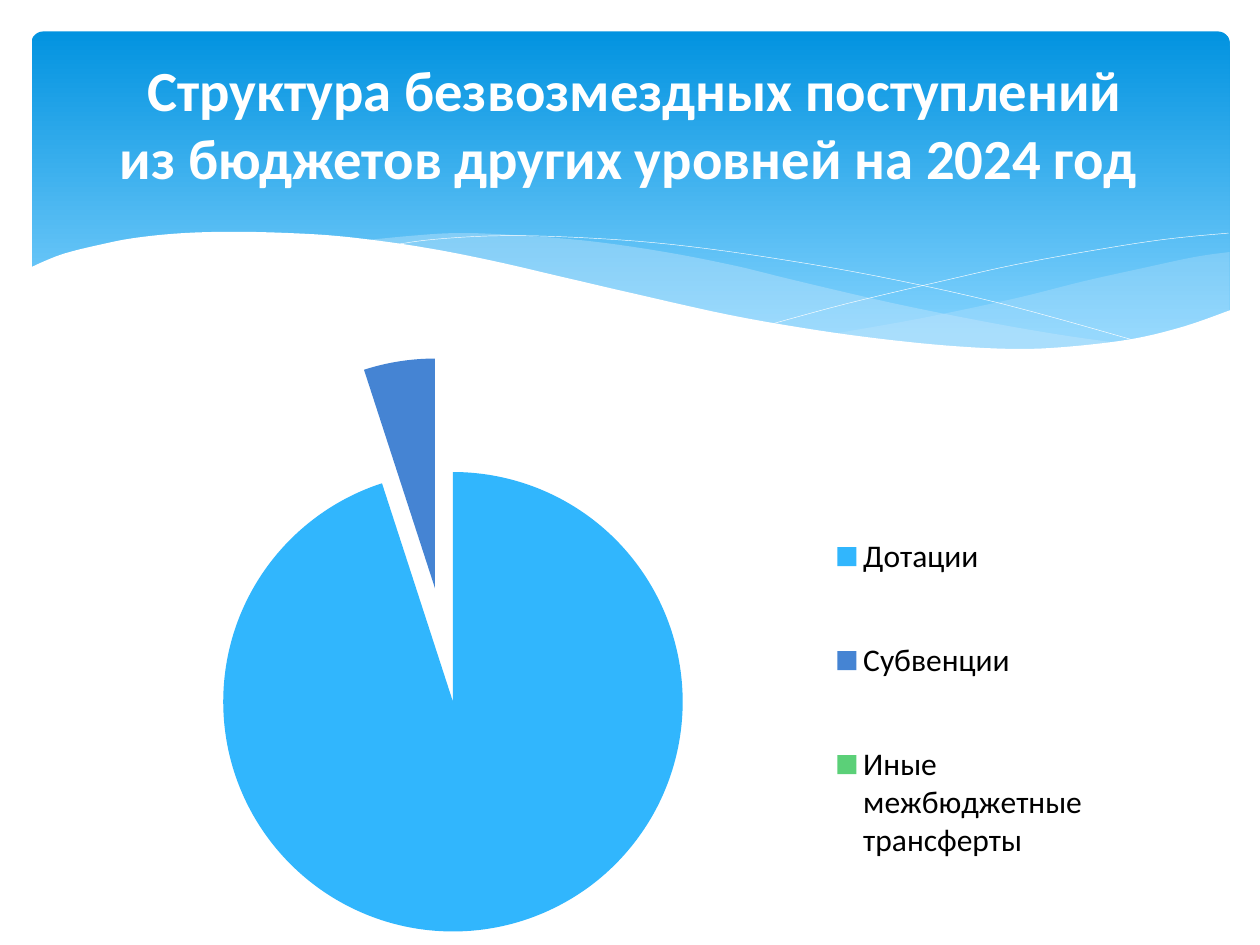
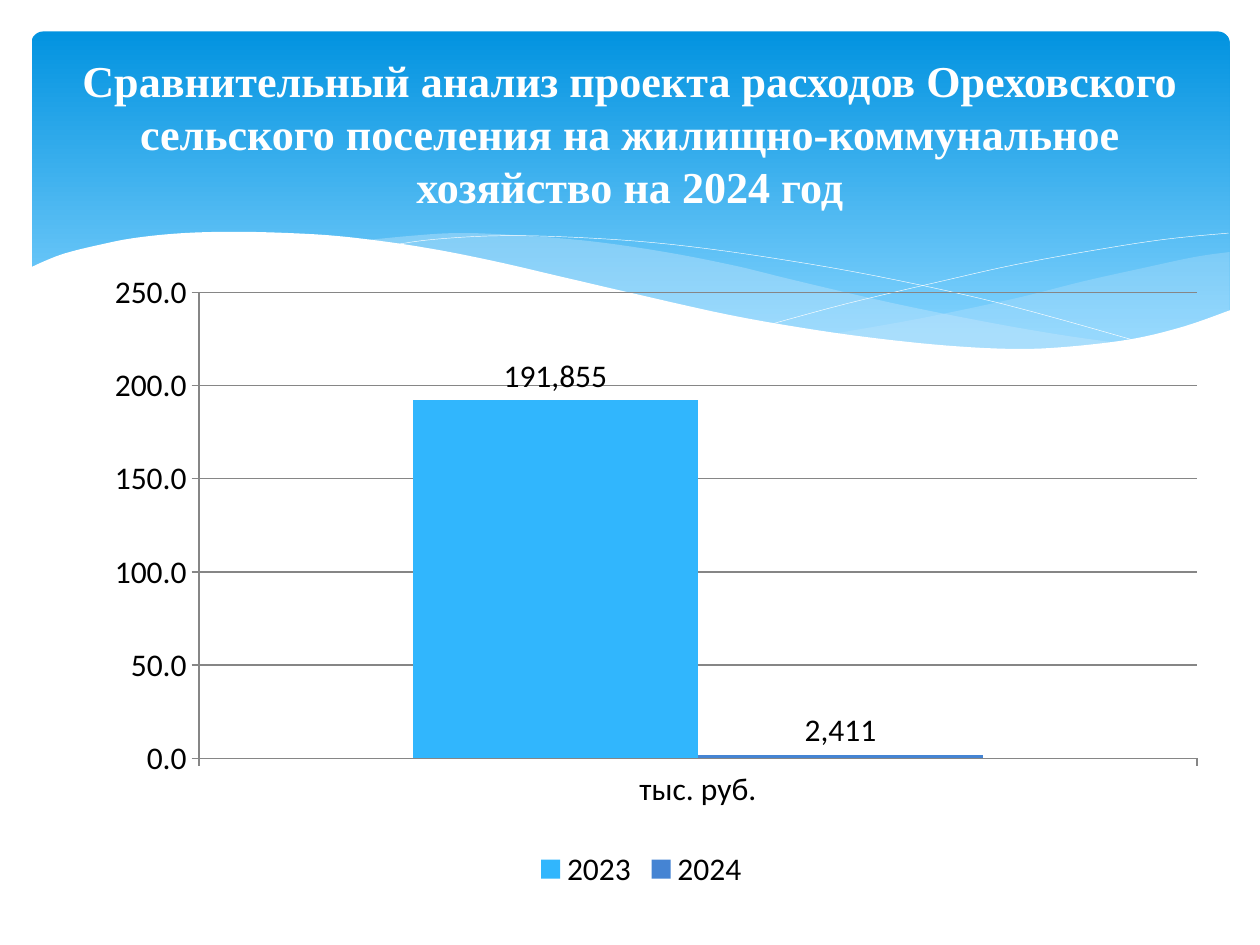
from dataclasses import dataclass
from typing import Any

from lxml.etree import SubElement
from pptx import Presentation
from pptx.chart.data import CategoryChartData
from pptx.dml.color import RGBColor
from pptx.enum.chart import XL_CHART_TYPE, XL_LABEL_POSITION, XL_LEGEND_POSITION, XL_TICK_MARK
from pptx.enum.shapes import MSO_SHAPE
from pptx.enum.text import MSO_ANCHOR, PP_ALIGN
from pptx.oxml import parse_xml
from pptx.oxml.ns import nsdecls, qn
from pptx.util import Inches, Pt

Point = tuple[float, float]
Box = tuple[float, float, float, float]

WHITE, BLACK, GRID = "FFFFFF", "000000", "868686"
BAND_TOP, BAND_BOTTOM, WAVE = "0293E0", "83D3FE", "C6E7FC"
SERIES_COLORS = ("31B6FD", "4584D3", "5BD078")


@dataclass
class Wave:
    """Smooth curves joined into one outline, filled or drawn as a hairline."""
    curves: list[list[Point]]
    fill: str | None = None
    alpha: int = 100


@dataclass
class Title:
    """Heading lines with their box and font."""
    lines: list[str]
    box: Box
    font: str
    size: float


WAVES = [
    Wave([[(9.76, 2), (9.48, 2.04), (9.06, 2.13), (8.61, 2.23), (8.05, 2.37), (7.29, 2.53),
           (6.61, 2.65)],
          [(6.61, 2.65), (7.05, 2.71), (7.57, 2.76), (8.03, 2.78), (8.54, 2.76), (8.97, 2.7),
           (9.35, 2.62), (9.76, 2.47)]], WAVE, 29),
    Wave([[(8.93, 2.73), (8.37, 2.65), (7.75, 2.54), (7.06, 2.4), (6.29, 2.22), (5.84, 2.11),
           (5.28, 2), (4.65, 1.91), (3.99, 1.86), (3.61, 1.85), (3.28, 1.87), (2.86, 1.91)],
          [(2.86, 1.91), (3.42, 1.99), (4.04, 2.11), (4.91, 2.32), (5.66, 2.48), (6.34, 2.61),
           (6.95, 2.7), (7.48, 2.76), (7.96, 2.78), (8.48, 2.77), (8.93, 2.73)]], WAVE, 40),
    Wave([[(3.09, 1.95), (3.44, 1.9), (4.01, 1.87), (4.69, 1.89), (5.33, 1.94), (6.08, 2.04),
           (6.95, 2.19), (7.95, 2.41), (9.07, 2.72)]]),
    Wave([[(6.13, 2.57), (6.72, 2.41), (7.48, 2.23), (8.06, 2.1), (8.66, 1.99), (9.24, 1.9),
           (9.75, 1.85)]]),
    Wave([[(9.77, 2.46), (9.4, 2.59), (8.99, 2.69), (8.5, 2.75), (8.09, 2.77), (7.61, 2.75),
           (7.08, 2.7), (6.48, 2.62), (5.79, 2.5), (5.03, 2.33), (4.47, 2.2), (3.91, 2.07),
           (3.4, 1.97), (2.92, 1.9), (2.5, 1.86), (1.93, 1.84), (1.46, 1.85), (1.06, 1.89),
           (0.76, 1.95), (0.52, 2.01), (0.36, 2.07), (0.23, 2.13)],
          [(0.23, 3.29), (9.77, 3.29)]], WHITE),
]


def rgb(color: str) -> RGBColor:
    """Turn a hex string into a colour."""
    return RGBColor.from_string(color)


def apply(target: Any, values: dict[str, Any]) -> None:
    """Set each named attribute on the target."""
    for name, value in values.items():
        setattr(target, name, value)


def style_font(font: Any, name: str, size: float, color: str, bold: bool = False) -> None:
    """Format a font."""
    apply(font, {"name": name, "size": Pt(size), "bold": bold})
    font.color.rgb = rgb(color)


def paint(target: Any, color: str) -> None:
    """Give a solid fill."""
    target.fill.solid()
    target.fill.fore_color.rgb = rgb(color)


def smooth(points: list[Point], steps: int = 5) -> list[Point]:
    """Sample a Catmull-Rom curve through the points."""
    if len(points) < 3:
        return points
    ends = [points[0], *points, points[-1]]
    curve = [points[0]]
    for a, b, c, d in zip(ends, ends[1:], ends[2:], ends[3:]):
        for t in (i / steps for i in range(1, steps + 1)):
            x, y = (
                (2 * q + (r - p) * t + (2 * p - 5 * q + 4 * r - u) * t ** 2
                 + (3 * q - p - 3 * r + u) * t ** 3) / 2
                for p, q, r, u in zip(a, b, c, d))
            curve.append((x, y))
    return curve


def add_wave(s: Any, wave: Wave) -> None:
    """Draw one wave of the header."""
    points = [(Inches(x), Inches(y)) for curve in wave.curves for x, y in smooth(curve)]
    builder = s.shapes.build_freeform(*points[0], scale=1.0)
    builder.add_line_segments(points[1:], close=wave.fill is not None)
    sp = builder.convert_to_shape()
    sp.shadow.inherit = False
    if wave.fill is None:
        sp.fill.background()
        sp.line.color.rgb = rgb(WHITE)
        sp.line.width = Pt(0.25)
        return
    paint(sp, wave.fill)
    sp.line.fill.background()
    if wave.alpha < 100:
        color = sp.fill._xPr.find(qn("a:solidFill"))[0]
        SubElement(color, qn("a:alpha"), val=str(wave.alpha * 1000))


def add_header(s: Any) -> None:
    """Draw the gradient band and its waves."""
    sp = s.shapes.add_shape(MSO_SHAPE.ROUNDED_RECTANGLE, *map(Inches, (0.25, 0.25, 9.51, 2.7)))
    sp.adjustments[0] = 0.034
    sp.shadow.inherit = False
    sp.line.fill.background()
    sp.fill.gradient()
    sp.fill.gradient_angle = 270
    for stop, color, position in zip(sp.fill.gradient_stops, (BAND_TOP, BAND_BOTTOM), (0, 0.9)):
        stop.color.rgb = rgb(color)
        stop.position = position
    for wave in WAVES:
        add_wave(s, wave)


def add_title(s: Any, title: Title) -> None:
    """Write the white heading over the band."""
    tf = s.shapes.add_textbox(*map(Inches, title.box)).text_frame
    apply(tf, {"word_wrap": True, "vertical_anchor": MSO_ANCHOR.MIDDLE})
    p = tf.paragraphs[0]
    p.alignment = PP_ALIGN.CENTER
    for i, line in enumerate(title.lines):
        if i:
            p.add_line_break()
        r = p.add_run()
        r.text = line
        style_font(r.font, title.font, title.size, WHITE, True)


def set_layout(element: Any, index: int, box: Box, inner: bool = False) -> None:
    """Place a chart part by fractions of the chart size."""
    for old in element.findall(qn("c:layout")):
        element.remove(old)
    target = '<c:layoutTarget val="inner"/>' if inner else ""
    modes = "".join(f'<c:{k}Mode val="edge"/>' for k in "xy")
    sizes = "".join(f'<c:{k} val="{v}"/>' for k, v in zip("xywh", box))
    element.insert(index, parse_xml(
        f'<c:layout {nsdecls("c")}><c:manualLayout>{target}{modes}{sizes}'
        '</c:manualLayout></c:layout>'))


def add_chart(s: Any, kind: Any, box: Box, data: Any, plot_box: Box, legend: Any) -> Any:
    """Add a chart with the shared font, legend and plot placement."""
    chart = s.shapes.add_chart(kind, *map(Inches, box), data).chart
    apply(chart, {"has_title": False, "has_legend": True})
    apply(chart.legend, {"position": legend, "include_in_layout": False})
    style_font(chart.font, "Calibri", 18, BLACK)
    set_layout(chart._chartSpace.chart.plotArea, 0, plot_box, True)
    return chart


def add_income_pie(s: Any) -> None:
    """Draw the exploded pie of transfers."""
    data = CategoryChartData()
    data.categories = ["Дотации", "Субвенции", "Иные \nмежбюджетные трансферты"]
    data.add_series("Series 1", (95, 5, None))
    chart = add_chart(s, XL_CHART_TYPE.PIE, (0.98, 2.49, 7.95, 5.01), data,
                      (0.02, 0.07, 0.6, 0.91), XL_LEGEND_POSITION.RIGHT)
    set_layout(chart.legend._element, 1, (0.69, 0.25, 0.29, 0.72))
    chart.plots[0].vary_by_categories = True
    series = chart.plots[0].series[0]
    for i, color in enumerate(SERIES_COLORS):
        paint(series.points[i].format, color)
    series._element.find(qn("c:dPt")).addprevious(
        parse_xml(f'<c:explosion {nsdecls("c")} val="25"/>'))


def add_expense_columns(s: Any) -> None:
    """Draw the yearly expense columns."""
    data = CategoryChartData(number_format="#,##0.0")
    data.categories = ["тыс. руб."]
    data.add_series("2023", (192,))
    data.add_series("2024", (2,))
    chart = add_chart(s, XL_CHART_TYPE.COLUMN_CLUSTERED, (0.59, 2.1, 9, 5), data,
                      (0.11, 0.044, 0.88, 0.74), XL_LEGEND_POSITION.BOTTOM)
    plot = chart.plots[0]
    apply(plot, {"gap_width": 150, "overlap": 0, "vary_by_categories": False})
    for series, color, text in zip(plot.series, SERIES_COLORS, ("191,855", "2,411")):
        paint(series.format, color)
        label = series.points[0].data_label
        label.position = XL_LABEL_POSITION.OUTSIDE_END
        r = label.text_frame.paragraphs[0].add_run()
        r.text = text
        style_font(r.font, "Calibri", 18, BLACK)
    for axis in (chart.category_axis, chart.value_axis):
        axis.major_tick_mark = XL_TICK_MARK.OUTSIDE
        axis.format.line.color.rgb = rgb(GRID)
    axis = chart.value_axis
    apply(axis, {"minimum_scale": 0, "maximum_scale": 250, "major_unit": 50})
    apply(axis.tick_labels, {"number_format": "#,##0.0", "number_format_is_linked": False})
    axis.major_gridlines.format.line.color.rgb = rgb(GRID)


def main() -> None:
    """Build both slides."""
    prs = Presentation()
    apply(prs, {"slide_width": Inches(10), "slide_height": Inches(7.5)})
    slides = [
        (add_income_pie, Title(
            ["Структура безвозмездных поступлений", "из бюджетов других уровней на 2024 год "],
            (0.59, 0.25, 8.9, 1.45), "Calibri", 32.4)),
        (add_expense_columns, Title(
            ["Сравнительный анализ проекта расходов Ореховского сельского поселения "
             "на жилищно-коммунальное хозяйство на 2024 год"],
            (0.5, 0.37, 9, 1.37), "Times New Roman", 25.2)),
    ]
    for draw_chart, title in slides:
        s = prs.slides.add_slide(prs.slide_layouts[6])
        add_header(s)
        draw_chart(s)
        add_title(s, title)
    prs.save("out.pptx")


if __name__ == "__main__":
    main()
